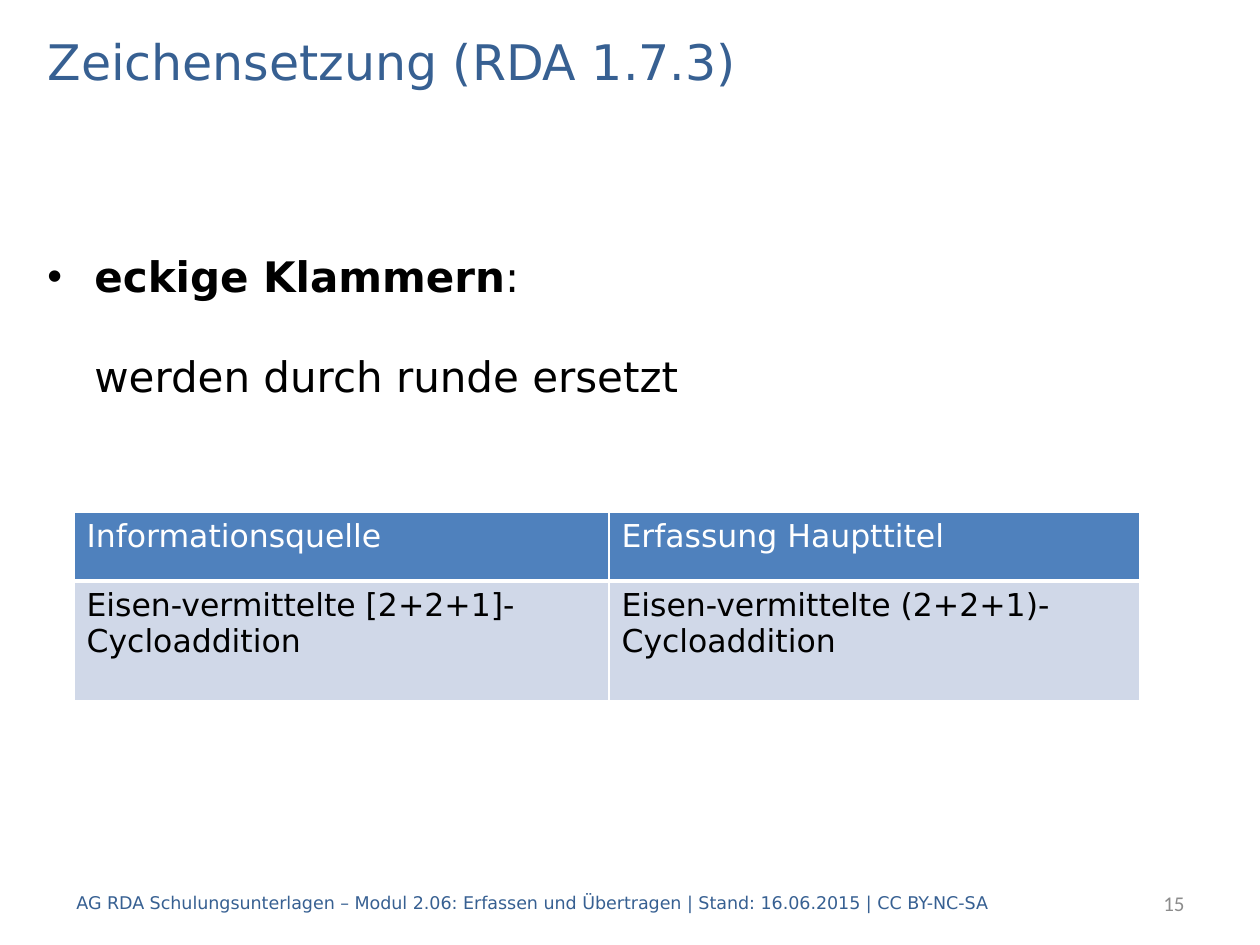
from lxml.etree import SubElement
from pptx import Presentation
from pptx.dml.color import RGBColor
from pptx.enum.text import MSO_ANCHOR, MSO_AUTO_SIZE, PP_ALIGN
from pptx.oxml.ns import qn
from pptx.util import Pt

PX = 914400 // 126
FONT = "DejaVu Sans"
BLUE, BLACK, WHITE = "376092", "000000", "FFFFFF"

TITLE = "Zeichensetzung (RDA 1.7.3)"
BODY = [[("eckige Klammern", True), (":", False)],
        [("werden durch runde ersetzt", False)]]
ROWS = [["Informationsquelle", "Erfassung Haupttitel"],
        ["Eisen-vermittelte [2+2+1]-Cycloaddition",
         "Eisen-vermittelte (2+2+1)-Cycloaddition"]]
ROW_STYLES = [("4F81BD", WHITE), ("D0D8E8", BLACK)]
COL_WIDTHS = [535, 531]
ROW_HEIGHTS = [69, 120]
FOOTER = ("AG RDA Schulungsunterlagen – Modul 2.06: Erfassen und Übertragen"
          " | Stand: 16.06.2015 | CC BY-NC-SA")
NUMBER = "15"


def px(*values):
    return [v * PX for v in values]


def rgb(color):
    return RGBColor.from_string(color)


def style(p, size, color, font=FONT):
    for r in p.runs:
        r.font.size = Pt(size)
        r.font.name = font
        r.font.color.rgb = rgb(color)


def fill_text(sp, text, size, color, font=FONT, align=PP_ALIGN.LEFT):
    tf = sp.text_frame
    tf.text = text
    tf.word_wrap = True
    tf.auto_size = MSO_AUTO_SIZE.NONE
    tf.vertical_anchor = MSO_ANCHOR.MIDDLE
    p = tf.paragraphs[0]
    p.alignment = align
    style(p, size, color, font)


def border(cell, side, width):
    ln = SubElement(cell._tc.get_or_add_tcPr(), qn(f"a:{side}"), w=str(Pt(width)))
    fill = SubElement(ln, qn("a:solidFill"))
    SubElement(fill, qn("a:srgbClr"), val=WHITE)


def add_body(s):
    tf = s.shapes.add_textbox(*px(35, 116, 1191, 753)).text_frame
    tf.word_wrap = True
    tf.margin_top = 135 * PX
    for i, parts in enumerate(BODY):
        p = tf.add_paragraph() if i else tf.paragraphs[0]
        for text, bold in parts:
            r = p.add_run()
            r.text = text
            r.font.bold = bold
        style(p, 24, BLACK)
        pPr = p._p.get_or_add_pPr()
        pPr.set("marL", str(47 * PX))
        if i:
            p.space_before = Pt(28)
        else:
            pPr.set("indent", str(-47 * PX))
            SubElement(pPr, qn("a:buFont"), typeface="Arial")
            SubElement(pPr, qn("a:buChar"), char="•")


def add_table(s):
    table = s.shapes.add_table(len(ROWS), len(COL_WIDTHS), *px(
        74, 512, sum(COL_WIDTHS), sum(ROW_HEIGHTS))).table
    for col, width in zip(table.columns, COL_WIDTHS):
        col.width = width * PX
    for i, (texts, (fill, color)) in enumerate(zip(ROWS, ROW_STYLES)):
        table.rows[i].height = ROW_HEIGHTS[i] * PX
        for j, text in enumerate(texts):
            cell = table.cell(i, j)
            cell.text = text
            style(cell.text_frame.paragraphs[0], 18, color)
            for p in cell.text_frame.paragraphs:
                for r in p.runs:
                    r.font.bold = False
            for side in ("lnL", "lnR", "lnT", "lnB"):
                header_rule = (i, side) in ((0, "lnB"), (1, "lnT"))
                border(cell, side, 3 if header_rule else 1)
            cell.fill.solid()
            cell.fill.fore_color.rgb = rgb(fill)


def main():
    prs = Presentation()
    prs.slide_width, prs.slide_height = px(1260, 945)
    s = prs.slides.add_slide(prs.slide_layouts[5])
    title = s.shapes.title
    title.left, title.top, title.width, title.height = px(35, 25, 1191, 71)
    fill_text(title, TITLE, 28, BLUE)
    add_body(s)
    add_table(s)
    fill_text(s.shapes.add_textbox(*px(64, 878, 1052, 50)), FOOTER, 10, BLUE)
    fill_text(s.shapes.add_textbox(*px(997, 878, 200, 50)), NUMBER, 12, "8C8C8C",
              "Calibri", PP_ALIGN.RIGHT)
    prs.save("out.pptx")


if __name__ == "__main__":
    main()
